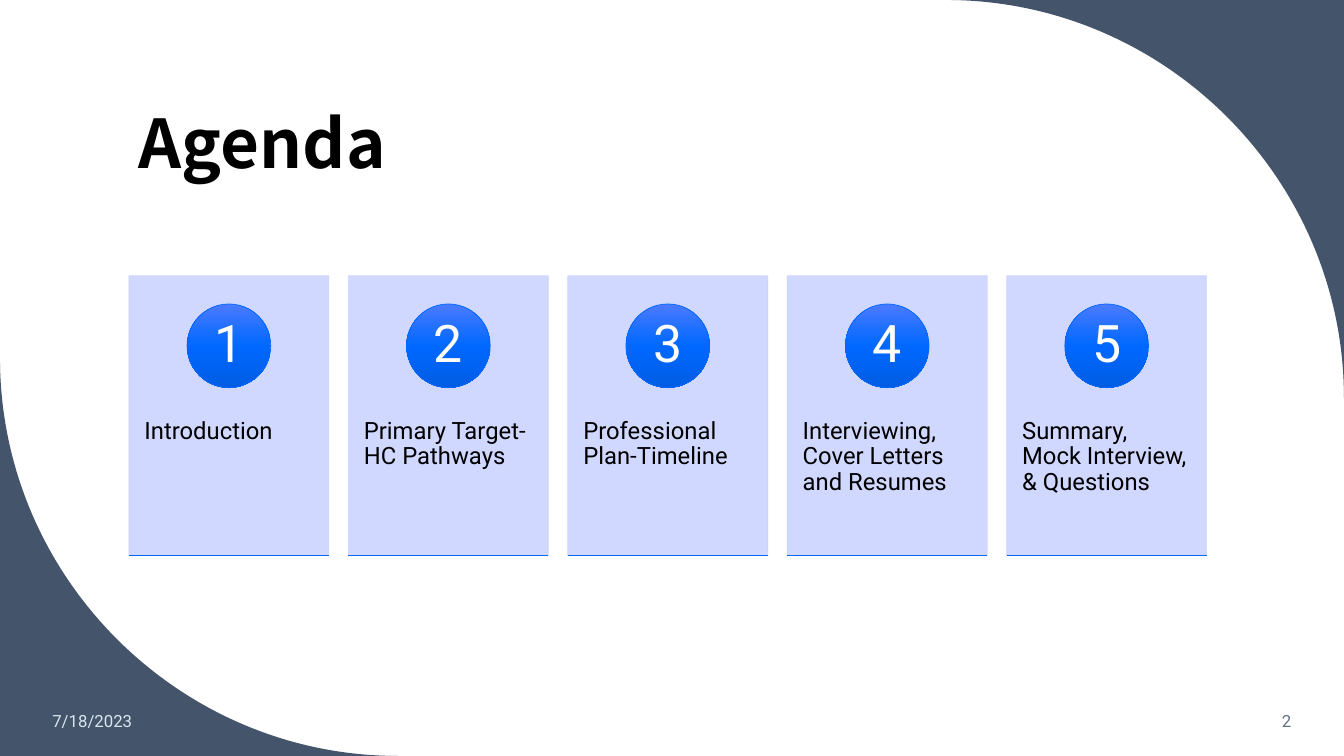
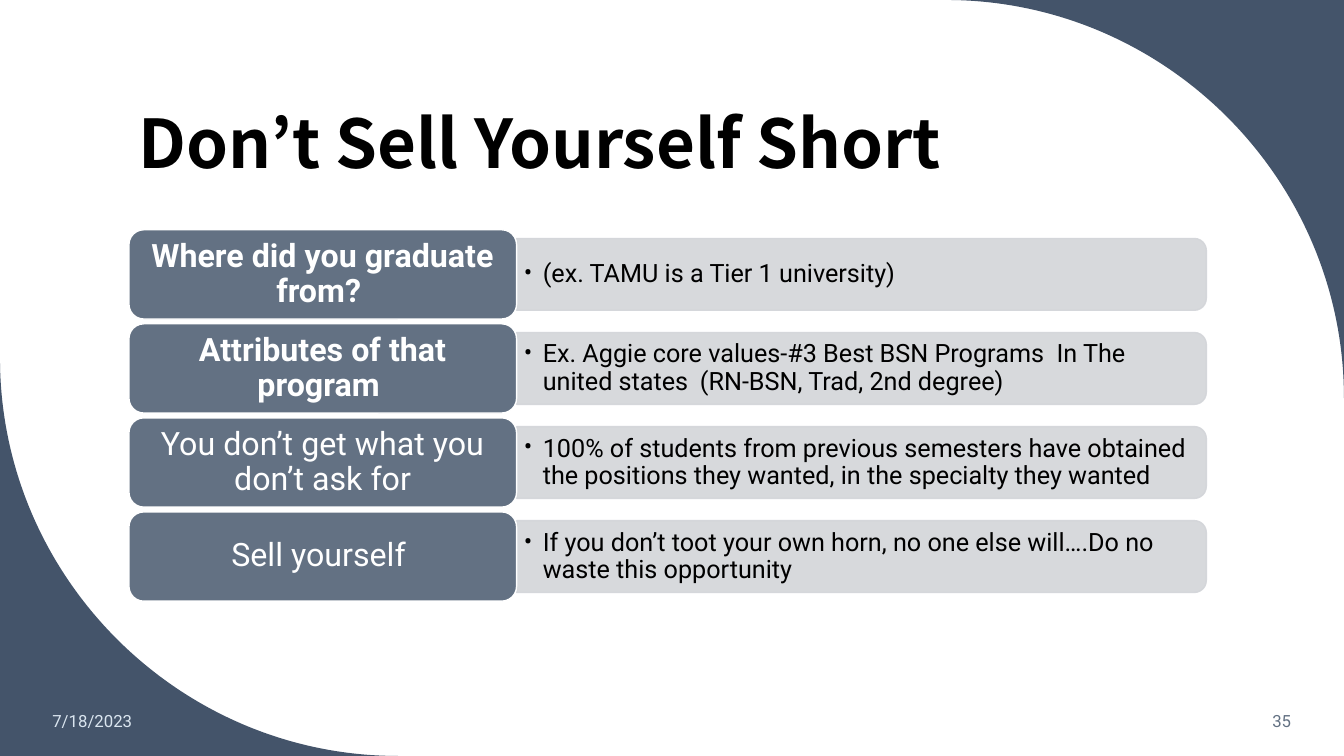
from copy import deepcopy

from lxml import etree
from pptx import Presentation
from pptx.dml.color import RGBColor
from pptx.enum.shapes import MSO_CONNECTOR, MSO_SHAPE
from pptx.enum.text import MSO_ANCHOR, PP_ALIGN
from pptx.oxml.ns import qn
from pptx.util import Cm, Pt

LEFT, CENTER, RIGHT = PP_ALIGN.LEFT, PP_ALIGN.CENTER, PP_ALIGN.RIGHT
TOP, MIDDLE, BOTTOM = MSO_ANCHOR.TOP, MSO_ANCHOR.MIDDLE, MSO_ANCHOR.BOTTOM
RECTANGLE, OVAL = MSO_SHAPE.RECTANGLE, MSO_SHAPE.OVAL
ROUNDED, ROUNDED_END = MSO_SHAPE.ROUNDED_RECTANGLE, MSO_SHAPE.ROUND_2_SAME_RECTANGLE
STRAIGHT = MSO_CONNECTOR.STRAIGHT

COLORS = {
    "corner": "44546A", "text": "000000", "white": "FFFFFF",
    "date": "DAE5EF", "slate": "637183", "bar": "D3D5D9",
    "card": "CCD4FF", "blue": "0068FF",
    "blue_light": "4B7BFF", "blue_dark": "005CE3",
}
TITLE_FONT, BODY_FONT = "Noto Sans CJK KR", "Roboto"

# Page geometry, in cm
PAGE_W, PAGE_H = 33.87, 19.05
CORNER_R = 10.03
CONTENT_X, CONTENT_W = 3.25, 27.15
ARC_HANDLE = 0.55  # Bezier handle of a quarter circle, as a share of its radius

DATE = "7/18/2023"
AGENDA = [
    "Introduction",
    "Primary Target-HC Pathways",
    "Professional Plan-Timeline",
    "Interviewing, Cover Letters and Resumes",
    "Summary, Mock Interview, & Questions",
]
# Heading, bold heading, advice
ADVICE = [
    ("Where did you graduate from? ", True, "(ex. TAMU is a Tier 1 university)"),
    ("Attributes of that program ", True,
     "Ex. Aggie core values-#3 Best BSN Programs  In The united states "
     "\t(RN-BSN, Trad, 2nd degree)"),
    ("You don’t get what you don’t ask for", False,
     "100% of students from previous semesters have obtained the positions "
     "they wanted, in the specialty they wanted"),
    ("Sell yourself ", False,
     "If you don’t toot your own horn, no one else will….Do no waste this opportunity"),
]


def rgb(name):
    return RGBColor.from_string(COLORS[name])


# Text
def add_bullet(paragraph, indent):
    properties = paragraph._p.get_or_add_pPr()
    properties.set("marL", str(Cm(indent)))
    properties.set("indent", str(-Cm(indent)))
    properties.set("defTabSz", str(Cm(2.22)))
    etree.SubElement(properties, qn("a:buFont"), typeface=BODY_FONT)
    etree.SubElement(properties, qn("a:buChar"), char="•")


def write(shape, text, size, color="text", font=BODY_FONT, bold=False, align=LEFT,
          anchor=MIDDLE, insets=(0.25, 0.13), spacing=0.9, bullet_indent=None):
    frame = shape.text_frame
    frame.word_wrap = True
    frame.vertical_anchor = anchor
    frame.margin_left = frame.margin_right = Cm(insets[0])
    frame.margin_top = frame.margin_bottom = Cm(insets[1])
    paragraph = frame.paragraphs[0]
    paragraph.text = text
    paragraph.alignment = align
    paragraph.line_spacing = spacing
    if bullet_indent:
        add_bullet(paragraph, bullet_indent)
    paragraph.font.name = font
    paragraph.font.size = Pt(size)
    paragraph.font.bold = bold
    paragraph.font.color.rgb = rgb(color)


def add_text(slide, x, y, w, h, text, size, **style):
    write(slide.shapes.add_textbox(Cm(x), Cm(y), Cm(w), Cm(h)), text, size, **style)


# Shapes
def add_block(slide, kind, x, y, w, h, fill=None, line=None, line_width=1):
    block = slide.shapes.add_shape(kind, Cm(x), Cm(y), Cm(w), Cm(h))
    block.shadow.inherit = False
    if fill:
        block.fill.solid()
        block.fill.fore_color.rgb = rgb(fill)
    else:
        block.fill.background()
    if line:
        block.line.color.rgb = rgb(line)
        block.line.width = Pt(line_width)
    else:
        block.line.fill.background()
    return block


def make_translucent(block, percent):
    for color in block.element.spPr.iter(qn("a:srgbClr")):
        etree.SubElement(color, qn("a:alpha"), val=str(percent * 1000))


def fill_blue_gradient(block):
    block.fill.gradient()
    block.fill.gradient_angle = 270
    stop_list = block.element.spPr.find(".//" + qn("a:gsLst"))
    stop_list.insert(1, deepcopy(stop_list[0]))
    stops = zip(block.fill.gradient_stops, (0, 0.5, 1), ("blue_light", "blue", "blue_dark"))
    for stop, position, color in stops:
        stop.position = position
        stop.color.rgb = rgb(color)


def add_rule(slide, x, y, w):
    rule = slide.shapes.add_connector(STRAIGHT, Cm(x), Cm(y), Cm(x + w), Cm(y))
    rule.line.color.rgb = rgb("blue")
    rule.line.width = Pt(0.5)
    etree.SubElement(rule.element.spPr, qn("a:effectLst"))


def bend_edge(shape):
    """Turn the second edge into a quarter circle bulging to the first point."""
    tip, start, end = [
        (int(point.get("x")), int(point.get("y")))
        for point in list(shape.element.spPr.iter(qn("a:pt")))[:3]
    ]
    edge = list(shape.element.spPr.iter(qn("a:lnTo")))[1]
    curve = etree.Element(qn("a:cubicBezTo"))
    handles = [
        [round(a + ARC_HANDLE * (b - a)) for a, b in zip(anchor, tip)]
        for anchor in (start, end)
    ]
    for x, y in (*handles, end):
        etree.SubElement(curve, qn("a:pt"), x=str(x), y=str(y))
    edge.getparent().replace(edge, curve)


def add_corner(slide, tip, arc_start, arc_end):
    builder = slide.shapes.build_freeform(Cm(tip[0]), Cm(tip[1]))
    builder.add_line_segments([(Cm(x), Cm(y)) for x, y in (arc_start, arc_end)], close=True)
    corner = builder.convert_to_shape()
    bend_edge(corner)
    corner.shadow.inherit = False
    corner.fill.solid()
    corner.fill.fore_color.rgb = rgb("corner")
    corner.line.fill.background()


# Shared frame: corners, title, footer
def add_framed_slide(deck, title, number):
    slide = deck.slides.add_slide(deck.slide_layouts[6])
    add_corner(slide, (PAGE_W, 0), (PAGE_W - CORNER_R, 0), (PAGE_W, CORNER_R))
    add_corner(slide, (0, PAGE_H), (CORNER_R, PAGE_H), (0, PAGE_H - CORNER_R))
    add_text(slide, CONTENT_X, 1.07, CONTENT_W, 3.68, title, 48,
             font=TITLE_FONT, bold=True, anchor=BOTTOM)
    add_text(slide, 1.07, 17.65, 4.72, 1.02, DATE, 12, color="date", spacing=1.0)
    add_text(slide, 28.19, 17.65, 4.6, 1.02, number, 12, color="slate",
             align=RIGHT, spacing=1.0)
    return slide


# Numbered agenda card
def add_agenda_card(slide, x, number, topic):
    y, w, h, disc = 6.95, 5.04, 7.05, 2.11
    card = add_block(slide, RECTANGLE, x, y, w, h, "card", "card", 0.5)
    make_translucent(card, 90)
    label = add_block(slide, RECTANGLE, x, 9.63, w, 4.22)
    write(label, topic, 17, anchor=TOP, insets=(0.39, 0.92))
    badge = add_block(slide, OVAL, x + (w - disc) / 2, y + 0.71, disc, disc,
                      "blue", "blue", 0.5)
    fill_blue_gradient(badge)
    write(badge, str(number), 37, color="white", align=CENTER, insets=(0, 0))
    add_rule(slide, x, y + h, w)


# Heading with a bar of advice to its right
def add_advice_row(slide, y, heading, bold, advice):
    h, heading_w, bar_h = 2.25, 9.77, 1.81
    bar_x, bar_w = CONTENT_X + heading_w, CONTENT_W - heading_w
    middle = y + h / 2
    # The bar stands upright before its quarter turn
    bar = add_block(slide, ROUNDED_END, bar_x + (bar_w - bar_h) / 2, middle - bar_w / 2,
                    bar_h, bar_w, "bar", "bar", 1)
    bar.rotation = 90
    make_translucent(bar, 90)
    add_text(slide, bar_x, middle - 0.81, 17.3, 1.62, advice, 18,
             insets=(0.18, 0.1), bullet_indent=0.48)
    label = add_block(slide, ROUNDED, CONTENT_X, y, heading_w, h, "slate", "white", 1)
    write(label, heading, 23, color="white", bold=bold, align=CENTER)


def main():
    deck = Presentation()
    deck.slide_width, deck.slide_height = Cm(PAGE_W), Cm(PAGE_H)

    agenda = add_framed_slide(deck, "Agenda", "2")
    for index, topic in enumerate(AGENDA):
        add_agenda_card(agenda, CONTENT_X + index * 5.53, index + 1, topic)

    selling = add_framed_slide(deck, "Don’t Sell Yourself Short", "35")
    for index, row in enumerate(ADVICE):
        add_advice_row(selling, 5.79 + index * 2.37, *row)

    deck.save("out.pptx")


if __name__ == "__main__":
    main()
